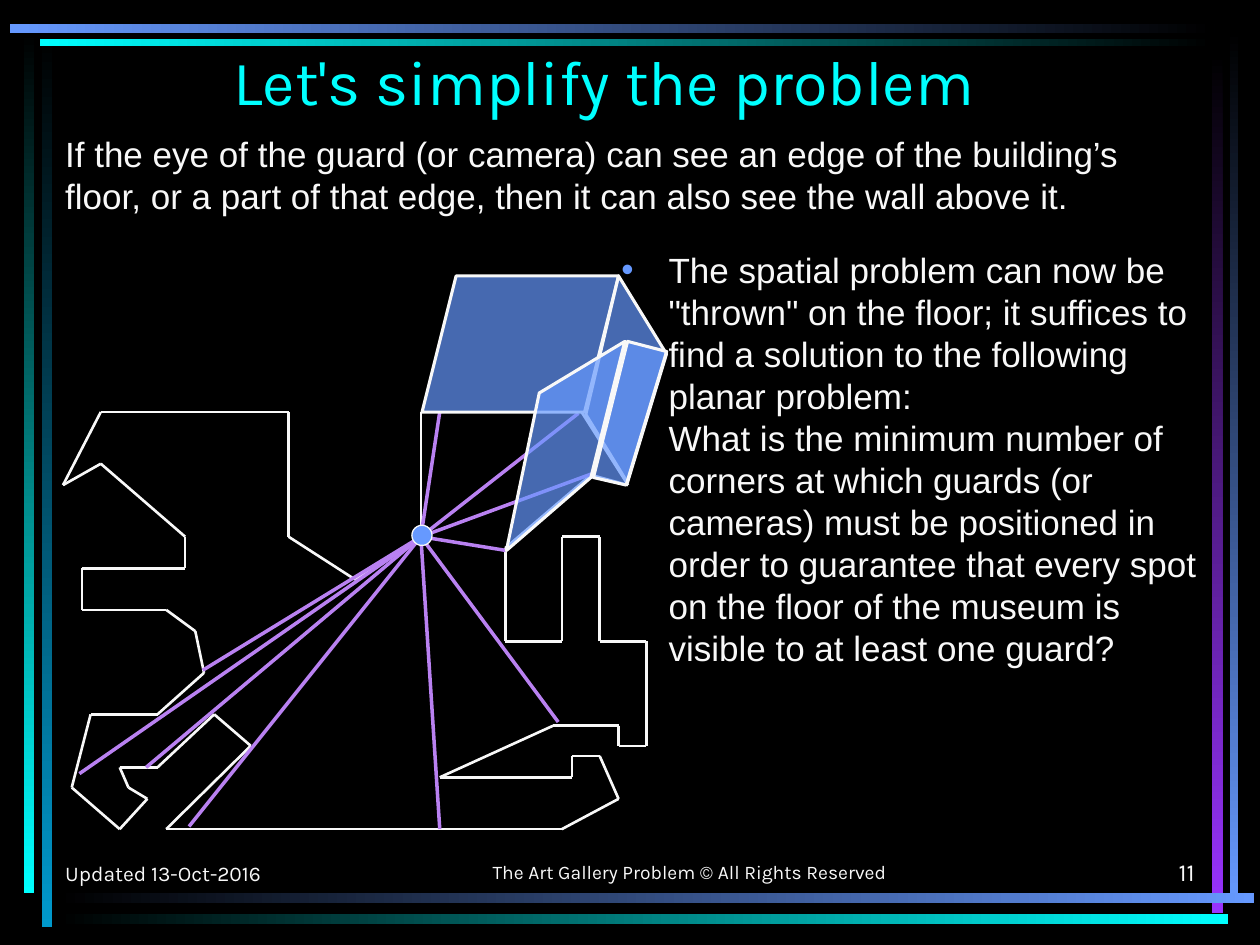
from itertools import pairwise

from lxml import etree
from pptx import Presentation
from pptx.dml.color import RGBColor
from pptx.enum.shapes import MSO_CONNECTOR, MSO_SHAPE
from pptx.enum.text import MSO_ANCHOR as ANCHOR, MSO_AUTO_SIZE, PP_ALIGN as ALIGN
from pptx.oxml.ns import qn
from pptx.util import Pt

BLACK = RGBColor(0x00, 0x00, 0x00)
WHITE = RGBColor(0xF8, 0xF8, 0xF8)
CYAN = RGBColor(0x00, 0xFF, 0xFF)
BLUE = RGBColor(0x66, 0x99, 0xFF)
TEAL = RGBColor(0x00, 0x99, 0xCC)
PURPLE = RGBColor(0x99, 0x33, 0xFF)
LILAC = RGBColor(0xB9, 0x81, 0xF1)

prs = Presentation()
prs.slide_width, prs.slide_height = Pt(720), Pt(540)
s = prs.slides.add_slide(prs.slide_layouts[1])
s.background.fill.solid()
s.background.fill.fore_color.rgb = BLACK


def write(sp, *paragraphs, box, size, font="Arial", color=WHITE,
          align=ALIGN.LEFT, anchor=ANCHOR.TOP, spacing=None):
    """Place a text shape at box and fill it with formatted paragraphs."""
    sp.left, sp.top, sp.width, sp.height = map(Pt, box)
    tf = sp.text_frame
    tf.word_wrap = True
    tf.auto_size = MSO_AUTO_SIZE.NONE
    tf.vertical_anchor = anchor
    for i, text in enumerate(paragraphs):
        p = tf.paragraphs[0] if i == 0 else tf.add_paragraph()
        p.alignment = align
        p.space_before = Pt(0)
        if spacing:
            p.line_spacing = Pt(spacing)
        r = p.add_run()
        r.text = text
        r.font.size, r.font.name = Pt(size), font
        r.font.color.rgb = color
    return tf


def draw_line(start, end, color, width):
    c = s.shapes.add_connector(MSO_CONNECTOR.STRAIGHT, *map(Pt, start + end))
    c.line.color.rgb = color
    c.line.width = Pt(width)
    etree.SubElement(c._element.spPr, qn("a:effectLst"))


# Frame bars: box, first colour, last colour, gradient angle
DOWN, RIGHT = 270, 0
bars = [
    ((23.8, 20.2, 5.8, 509.8), BLACK, TEAL, DOWN),
    ((13.7, 18, 5.8, 492.5), BLACK, CYAN, DOWN),
    ((702.7, 17.3, 5, 499), BLACK, BLUE, DOWN),
    ((692.6, 30.2, 6.1, 491.8), BLACK, PURPLE, DOWN),
    ((32.4, 510.2, 684, 5.8), BLACK, BLUE, RIGHT),
    ((32.4, 522, 669.6, 5.8), BLACK, CYAN, RIGHT),
    ((23, 22.3, 671, 4.3), CYAN, BLACK, RIGHT),
    ((5.8, 13.7, 688.3, 5), BLUE, BLACK, RIGHT),
]
for box, first, last, angle in bars:
    bar = s.shapes.add_shape(MSO_SHAPE.RECTANGLE, *map(Pt, box))
    bar.shadow.inherit = False
    bar.line.fill.background()
    bar.fill.gradient()
    bar.fill.gradient_angle = angle
    for stop, color in zip(bar.fill.gradient_stops, (first, last)):
        stop.color.rgb = color

# Title and list
tf = write(s.shapes.title, "Let's simplify the problem", box=(30.2, 18, 630, 66.2),
           size=36, font="Karla", color=CYAN, align=ALIGN.CENTER, anchor=ANCHOR.MIDDLE)
tf.margin_bottom = Pt(13.6)

tf = write(
    s.placeholders[1],
    'The spatial problem can now be "thrown" on the floor; it suffices to find '
    "a solution to the following planar problem:",
    "What is the minimum number of corners at which guards (or cameras) must be "
    "positioned in order to guarantee that every spot on the floor of the museum "
    "is visible to at least one guard?",
    box=(347.8, 138.2, 347.8, 356.4), size=20, spacing=24)
for p, bullet in zip(tf.paragraphs, ("•", None)):
    pPr = p._p.get_or_add_pPr()
    pPr.set("marL", str(Pt(27)))
    pPr.set("indent", str(Pt(-27 if bullet else 0)))
    if bullet:
        clr = etree.SubElement(pPr, qn("a:buClr"))
        etree.SubElement(clr, qn("a:srgbClr"), val=str(BLUE))
        etree.SubElement(pPr, qn("a:buChar"), char=bullet)
    else:
        etree.SubElement(pPr, qn("a:buNone"))

# Floor plan of the museum
floor = [
    (95, 473.8), (321.1, 473.8), (353.5, 456.5), (342.7, 432), (326.9, 432),
    (326.9, 444.2), (251.3, 444.2), (316.1, 414.7), (353.5, 414.7), (353.5, 426.2),
    (369.4, 426.2), (369.4, 366.5), (342.7, 366.5), (342.7, 306.7), (321.1, 306.7),
    (321.1, 366.5), (288.7, 366.5), (288.7, 313.2), (337.7, 271.4), (358.9, 277.2),
    (332.3, 235.4), (240.5, 235.4), (240.5, 306.7), (203, 331.2), (164.9, 306.7),
    (164.9, 235.4), (57.6, 235.4), (36, 277.2), (57.6, 265), (105.8, 306.7),
    (105.8, 324.7), (46.8, 324.7), (46.8, 348.5), (95, 348.5), (111.6, 360.7),
    (116.6, 384.5), (90, 408.2), (51.8, 408.2), (41, 450), (68.4, 473.8),
    (84.2, 456.5), (73.4, 450), (68.4, 438.5), (90, 438.5), (122.4, 408.2),
    (143.3, 426.2),
]
for start, end in pairwise(floor + floor[:1]):
    draw_line(start, end, WHITE, 1.5)

# Sight lines from the guard
guard = (240.5, 306.7)
targets = [(289.4, 314.6), (319, 412.6), (338.4, 270.7), (330.5, 236.2), (251.3, 473.8),
           (115.9, 383), (83.5, 438.5), (108, 472.3), (45.4, 442.1), (251.3, 235.4)]
for target in targets:
    draw_line(guard, target, LILAC, 2)

# Walls that the guard sees
walls = [s.shapes.add_shape(MSO_SHAPE.PARALLELOGRAM, Pt(241.2), Pt(157.7), Pt(112.3), Pt(77.8))]
wall_corners = [
    [(334.8, 236.9), (353.5, 157.7), (380.9, 202.3), (358.6, 275.8)],
    [(339.1, 272.9), (358.6, 195.1), (380.9, 200.9), (357.8, 277.2)],
    [(289.4, 314.6), (308.2, 224.6), (357.1, 195.1), (337.7, 272.9)],
]
for corners in wall_corners:
    first, *rest = [(Pt(x), Pt(y)) for x, y in corners]
    fb = s.shapes.build_freeform(*first)
    fb.add_line_segments(rest, close=True)
    walls.append(fb.convert_to_shape())
for wall in walls:
    wall.shadow.inherit = False
    wall.fill.solid()
    wall.fill.fore_color.rgb = BLUE
    clr = wall._element.spPr.find(qn("a:solidFill")).find(qn("a:srgbClr"))
    etree.SubElement(clr, qn("a:alpha"), val="69000")
    wall.line.color.rgb = WHITE
    wall.line.width = Pt(1.75)

# Intro and footer
texts = [
    ("If the eye of the guard (or camera) can see an edge of the building’s floor, "
     "or a part of that edge, then it can also see the wall above it.",
     dict(box=(30.2, 72, 660.2, 55.4), size=20, spacing=24)),
    ("Updated 13-Oct-2016",
     dict(box=(30.2, 473.8, 149.8, 36), size=12, font="Karla", anchor=ANCHOR.BOTTOM)),
    ("The Art Gallery Problem © All Rights Reserved",
     dict(box=(210.2, 472.3, 367.9, 36), size=11, font="Karla", align=ALIGN.CENTER,
          anchor=ANCHOR.BOTTOM)),
    ("11", dict(box=(540, 473.8, 149.8, 36), size=14, font="Karla", align=ALIGN.RIGHT,
                anchor=ANCHOR.BOTTOM)),
]
for text, style in texts:
    write(s.shapes.add_textbox(0, 0, 0, 0), text, **style)

# Guard
dot = s.shapes.add_shape(MSO_SHAPE.OVAL, Pt(235.4), Pt(300.2), Pt(11.5), Pt(11.5))
dot.shadow.inherit = False
dot.fill.solid()
dot.fill.fore_color.rgb = BLUE
dot.line.color.rgb = WHITE
dot.line.width = Pt(0.75)

prs.save("out.pptx")
